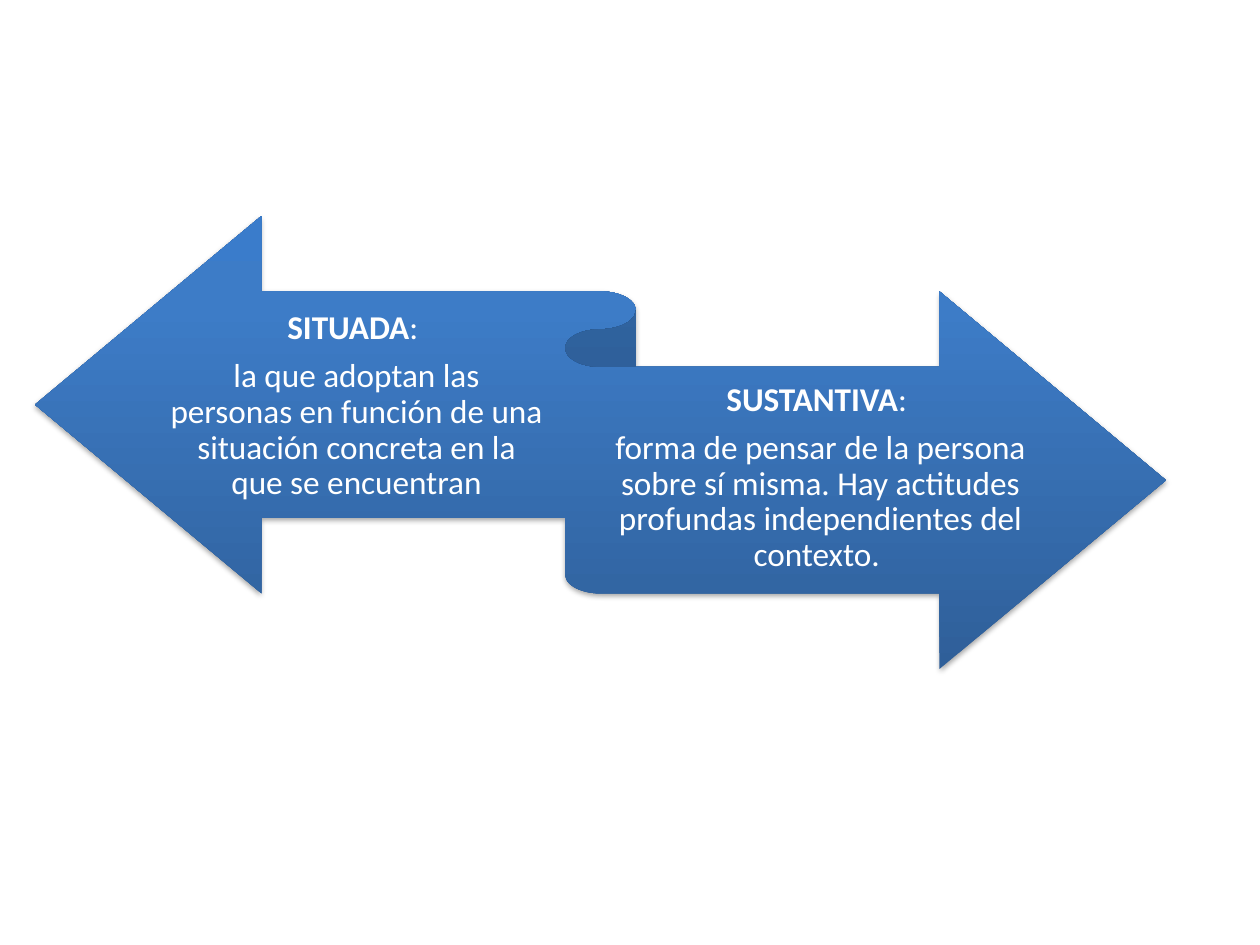
from lxml.etree import SubElement as Sub
from pptx import Presentation
from pptx.dml.color import RGBColor
from pptx.enum.shapes import MSO_SHAPE as Shape
from pptx.enum.text import MSO_ANCHOR as Anchor, PP_ALIGN as Align
from pptx.oxml.ns import qn
from pptx.util import Pt

PX = 914400 / 126
WHITE = RGBColor(0xFF, 0xFF, 0xFF)
BLACK = RGBColor(0x00, 0x00, 0x00)
DARK = RGBColor(0x2F, 0x5F, 0x99)
MID = RGBColor(0x3D, 0x7C, 0xC7)
LIGHT = RGBColor(0x3A, 0x7C, 0xCB)


def px(*nums):
    return [round(n * PX) for n in nums]


deck = Presentation()
deck.slide_width, deck.slide_height = px(1260, 945)
slide = deck.slides.add_slide(deck.slide_layouts[6])
group = slide.shapes.add_group_shape()

# Two-way ribbon arrow
ribbon = group.shapes.add_shape(Shape.LEFT_RIGHT_RIBBON, *px(35, 216, 1131, 453))
ribbon.line.fill.background()
ribbon.shadow.inherit = False

# Gradient from dark at the bottom to light at the top
ribbon.fill.gradient()
ribbon.fill.gradient_angle = 90
props = ribbon.element.spPr
stops = props.find(".//" + qn("a:gsLst"))
for stop in list(stops):
    stops.remove(stop)
for pos, color in [(0, DARK), (80, MID), (100, LIGHT)]:
    stop = Sub(stops, qn("a:gs"), pos=str(pos * 1000))
    Sub(stop, qn("a:srgbClr"), val=str(color))

# Soft shadow below
shade = Sub(props.find(qn("a:effectLst")), qn("a:outerShdw"), blurRad=str(Pt(3.1)),
            dist=str(Pt(1.8)), dir="5400000", rotWithShape="0")
tint = Sub(shade, qn("a:srgbClr"), val=str(BLACK))
Sub(tint, qn("a:alpha"), val="35000")

# Heading and meaning on each arm
arms = [
    ((170, 296, 373, 222), "SITUADA",
     "la que adoptan las personas en función de una situación concreta en la "
     "que se encuentran"),
    ((600, 368, 441, 222), "SUSTANTIVA",
     "forma de pensar de la persona sobre sí misma. Hay actitudes profundas "
     "independientes del contexto. "),
]
left, top, right, bottom = px(0, 9, 0, 10)
frame_style = {"word_wrap": True, "vertical_anchor": Anchor.MIDDLE,
               "margin_left": left, "margin_top": top,
               "margin_right": right, "margin_bottom": bottom}
para_style = {"alignment": Align.CENTER, "line_spacing": 0.9, "space_after": Pt(6.65)}
font_style = {"name": "Calibri", "size": Pt(19)}

for place, head, body in arms:
    frame = group.shapes.add_textbox(*px(*place)).text_frame
    for key, value in frame_style.items():
        setattr(frame, key, value)
    lines = [[(head, True), (": ", False)], [(body, False)]]
    for i, line in enumerate(lines):
        para = frame.add_paragraph() if i else frame.paragraphs[0]
        for key, value in para_style.items():
            setattr(para, key, value)
        for text, bold in line:
            run = para.add_run()
            run.text = text
            for key, value in font_style.items():
                setattr(run.font, key, value)
            run.font.bold = bold
            run.font.color.rgb = WHITE

deck.save("out.pptx")
